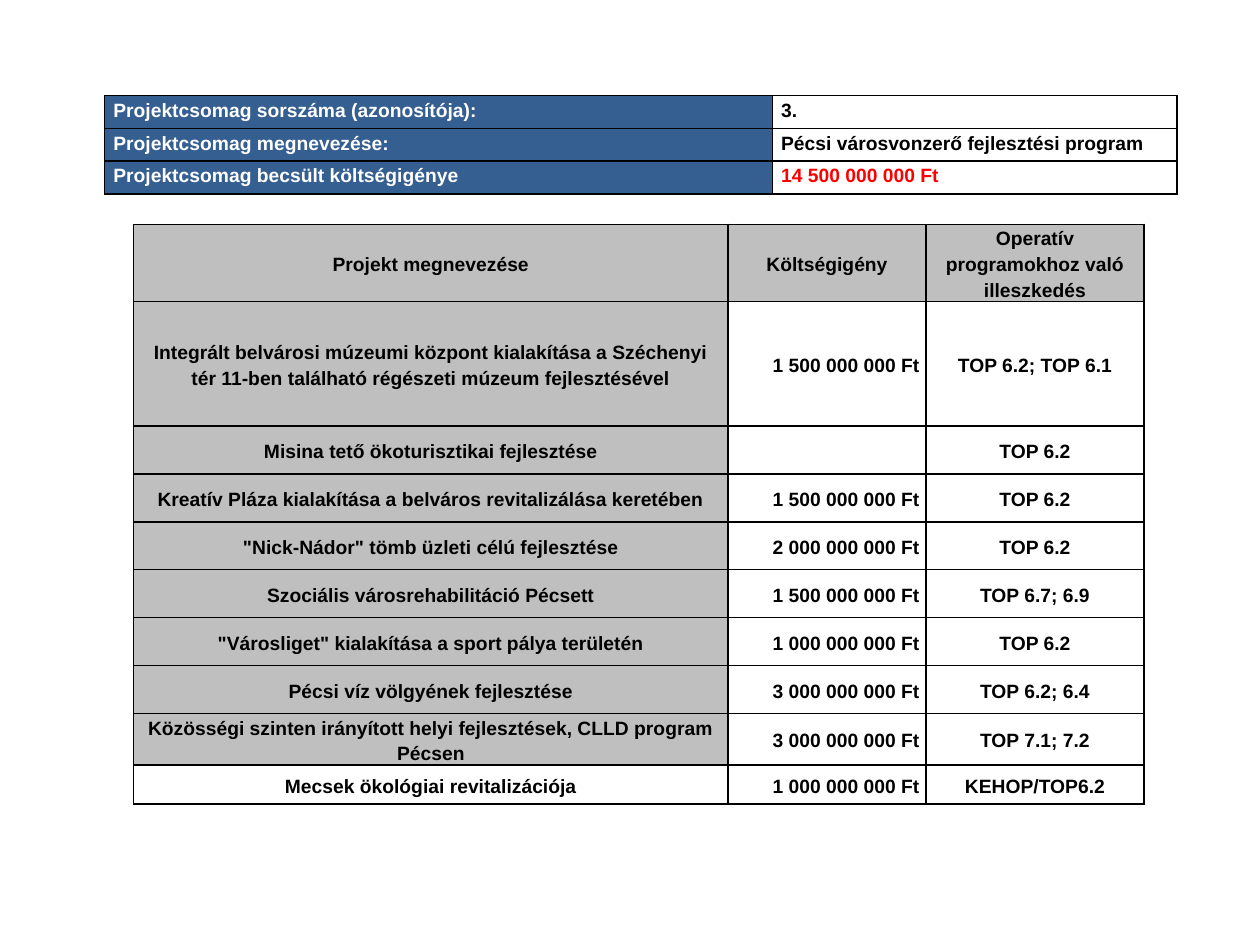
"""Build the project package slide with its summary and its list of projects."""
from dataclasses import dataclass

from lxml import etree
from pptx import Presentation
from pptx import util as u
from pptx.dml.color import RGBColor
from pptx.enum import text
from pptx.oxml import ns


@dataclass(frozen=True)
class Theme:
    """Keep the colours and type sizes together."""
    font: str = "Arial"
    size: int = 11
    line_spacing: float = 1.2
    border_width: float = 1
    black: str = "000000"
    white: str = "FFFFFF"
    red: str = "FF0000"
    blue: str = "365F91"
    grey: str = "BFBFBF"


THEME = Theme()
JUSTIFY = text.PP_ALIGN.JUSTIFY
CENTER = text.PP_ALIGN.CENTER
RIGHT = text.PP_ALIGN.RIGHT

SUMMARY = [
    ("Projektcsomag sorszáma (azonosítója):", "3."),
    ("Projektcsomag megnevezése:", "Pécsi városvonzerő fejlesztési program"),
    ("Projektcsomag becsült költségigénye", "14 500 000 000 Ft"),
]
PROJECTS = [
    ("Projekt megnevezése", "Költségigény", "Operatív programokhoz való illeszkedés"),
    ("Integrált belvárosi múzeumi központ kialakítása a Széchenyi tér 11-ben "
     "található régészeti múzeum fejlesztésével", "1 500 000 000 Ft", "TOP 6.2; TOP 6.1"),
    ("Misina tető ökoturisztikai fejlesztése", "", "TOP 6.2"),
    ("Kreatív Pláza kialakítása a belváros revitalizálása keretében",
     "1 500 000 000 Ft", "TOP 6.2"),
    ('"Nick-Nádor" tömb üzleti célú fejlesztése', "2 000 000 000 Ft", "TOP 6.2"),
    ("Szociális városrehabilitáció Pécsett", "1 500 000 000 Ft", "TOP 6.7; 6.9"),
    ('"Városliget" kialakítása a sport pálya területén', "1 000 000 000 Ft", "TOP 6.2"),
    ("Pécsi víz völgyének fejlesztése", "3 000 000 000 Ft", "TOP 6.2; 6.4"),
    ("Közösségi szinten irányított helyi fejlesztések, CLLD program Pécsen",
     "3 000 000 000 Ft", "TOP 7.1; 7.2"),
    ("Mecsek ökológiai revitalizációja", "1 000 000 000 Ft", "KEHOP/TOP6.2"),
]


def write_text(frame, content, *, color=THEME.black, align=CENTER, spacing=0):
    """Write one bold paragraph into a text frame."""
    paragraph = frame.paragraphs[0]
    paragraph.alignment = align
    paragraph.line_spacing = THEME.line_spacing
    paragraph.space_before = paragraph.space_after = u.Pt(spacing)
    run = paragraph.add_run()
    run.text = content
    run.font.name = THEME.font
    run.font.size = u.Pt(THEME.size)
    run.font.bold = True
    run.font.color.rgb = RGBColor.from_string(color)


class SlideBuilder:
    """Hold the theme and the current slide, and add elements to it."""

    def __init__(self, slide, theme):
        """Keep the slide and its theme."""
        self.slide = slide
        self.theme = theme

    def add_table(self, left, top, columns, rows):
        """Add an unbanded table and return it."""
        shape = self.slide.shapes.add_table(
            len(rows), len(columns), u.Inches(left), u.Inches(top),
            u.Inches(sum(columns)), u.Inches(sum(rows)))
        table = shape.table
        table.first_row = table.horz_banding = False
        for column, width in zip(table.columns, columns):
            column.width = u.Inches(width)
        for row, height in zip(table.rows, rows):
            row.height = u.Inches(height)
        return table

    def add_borders(self, cell):
        """Draw a solid line on the four sides of a cell."""
        properties = cell._tc.get_or_add_tcPr()
        for position, side in enumerate(("lnL", "lnR", "lnT", "lnB")):
            line = etree.Element(ns.qn(f"a:{side}"), w=str(u.Pt(self.theme.border_width)))
            fill = etree.SubElement(line, ns.qn("a:solidFill"))
            etree.SubElement(fill, ns.qn("a:srgbClr"), val=self.theme.black)
            properties.insert(position, line)

    def fill_cell(self, cell, content, *, fill=None, margin=0.05,
                  anchor=text.MSO_ANCHOR.MIDDLE, **text_format):
        """Set the fill, margins, borders and text of a cell."""
        if fill:
            cell.fill.solid()
            cell.fill.fore_color.rgb = RGBColor.from_string(fill)
        else:
            cell.fill.background()
        cell.margin_left = cell.margin_right = u.Inches(margin)
        cell.margin_top = cell.margin_bottom = 0
        cell.vertical_anchor = anchor
        self.add_borders(cell)
        if content:
            write_text(cell.text_frame, content, **text_format)

    def add_summary(self):
        """Add the table that identifies the project package."""
        table = self.add_table(0.83, 0.76, [5.3, 3.21], [0.26] * len(SUMMARY))
        last = len(SUMMARY) - 1
        for row, (label, value) in enumerate(SUMMARY):
            value_color = self.theme.red if row == last else self.theme.black
            styles = [(label, self.theme.blue, self.theme.white), (value, None, value_color)]
            for column, (content, fill, color) in enumerate(styles):
                self.fill_cell(table.cell(row, column), content, fill=fill, color=color,
                               margin=0.07, anchor=text.MSO_ANCHOR.TOP, align=JUSTIFY)

    def add_projects(self):
        """Add the table of projects with costs and programmes."""
        heights = [0.42, 0.99] + [0.38] * 6 + [0.39, 0.31]
        table = self.add_table(1.06, 1.78, [4.72, 1.57, 1.73], heights)
        last = len(PROJECTS) - 1
        for row, contents in enumerate(PROJECTS):
            for column, content in enumerate(contents):
                shaded = row == 0 or (column == 0 and row < last)
                self.fill_cell(table.cell(row, column), content,
                               fill=self.theme.grey if shaded else self.theme.white,
                               align=RIGHT if column == 1 and row else CENTER, spacing=6)


def main():
    """Create and save the presentation."""
    presentation = Presentation()
    presentation.slide_width = u.Inches(10)
    presentation.slide_height = u.Inches(7.5)
    slide = presentation.slides.add_slide(presentation.slide_layouts[6])
    builder = SlideBuilder(slide, THEME)
    builder.add_summary()
    builder.add_projects()
    presentation.save("out.pptx")


if __name__ == "__main__":
    main()
